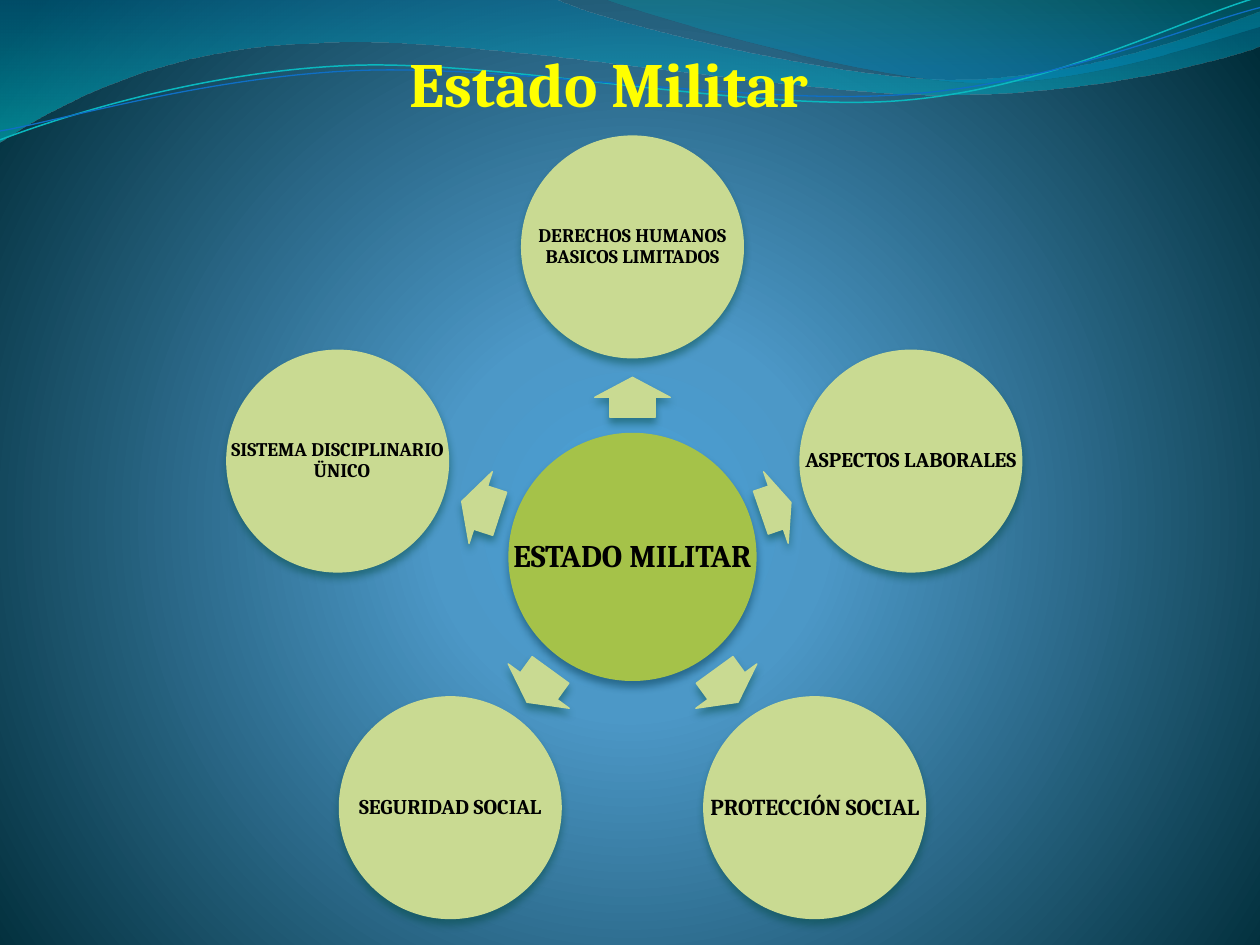
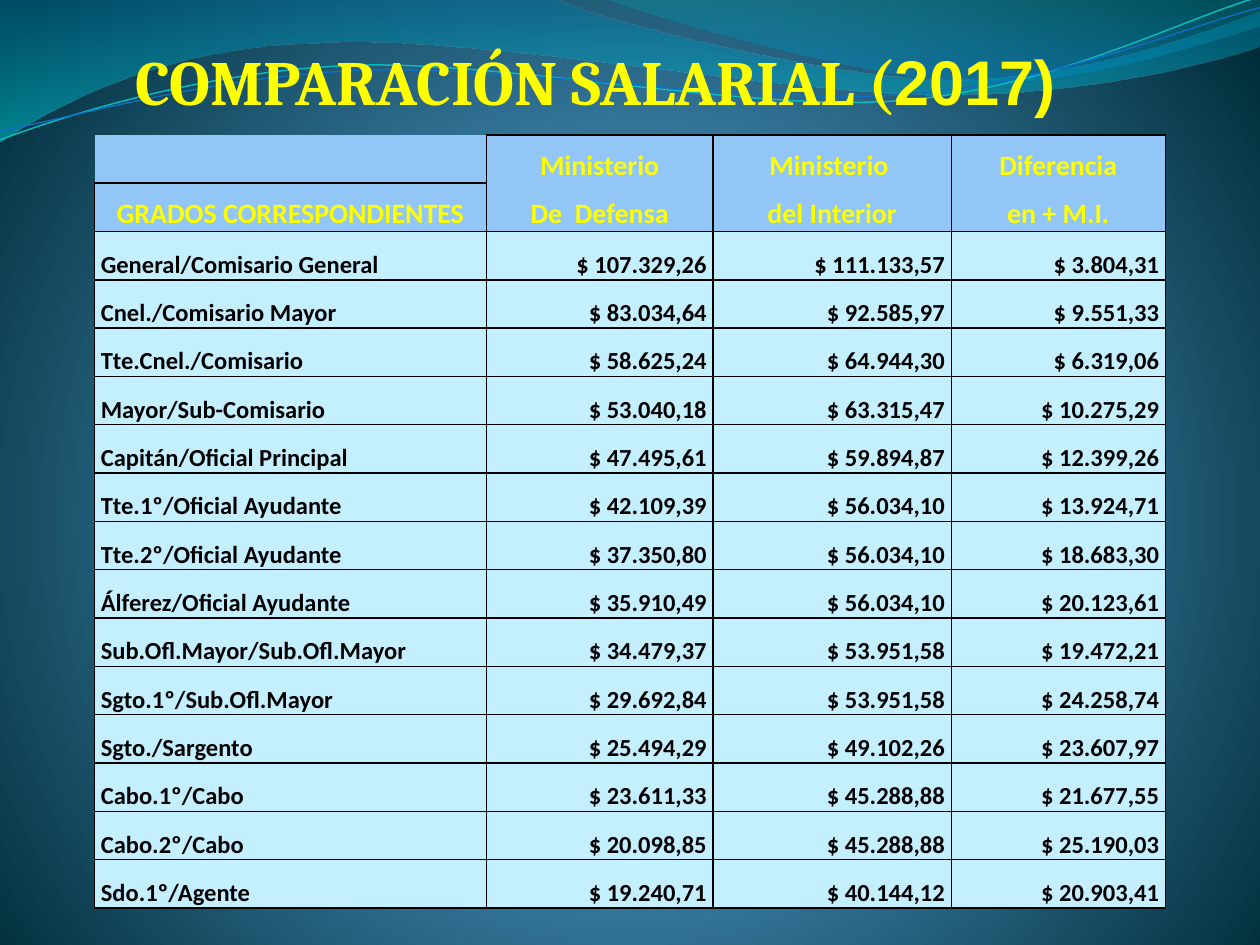
import math
from dataclasses import dataclass
from typing import NamedTuple, Optional

from pptx import Presentation
from pptx.dml.color import RGBColor
from pptx.enum import shapes, text
from pptx.oxml import parse_xml
from pptx.oxml.ns import nsdecls, qn
from pptx.util import Inches, Pt


@dataclass(frozen=True)
class Theme:
    title: str = "FFFF00"
    ink: str = "000000"
    hub: str = "A5C249"
    hub_shadow: str = "00374C"
    node: str = "C9DA92"
    node_shadow: str = "034C44"
    header_fill: str = "91C6F7"
    body_fill: str = "C4EFFF"
    serif: str = "Cambria"
    sans: str = "Calibri"
    digits: str = "Arial"
    title_size: int = 36
    hub_size: int = 18
    header_size: int = 16
    body_size: int = 14


THEME = Theme()


class Stop(NamedTuple):
    position: int
    color: str
    opacity: int = 100


@dataclass(frozen=True)
class Wave:
    """A start point, then curves of six numbers and lines of two, in inches."""
    start: tuple
    steps: tuple
    stops: tuple = ()
    line: Optional[str] = None
    width: float = 0
    tilt: float = 0


class Node(NamedTuple):
    label: str
    size: int
    shift: float = 0


LINEAR = '<a:lin ang="5400000" scaled="1"/>'
RADIAL = ('<a:path path="circle"><a:fillToRect l="10000" t="110000" '
          'r="10000" b="100000"/></a:path>')
BACKGROUND = (Stop(0, "4AA0D6"), Stop(25, "4C98C7"), Stop(100, "002C38"))

TILT_CENTER = (4.99, 0.58)
WAVES = (
    Wave((0, 0), ((4.4, -0.01), (4.76, 0.17, 6.64, 0.63, 7.58, 0.63),
                  (8.53, 0.63, 9.58, 0.26, 10, 0.09), (10.01, 0.36),
                  (9.83, 0.44, 8.7, 0.76, 7.46, 0.75),
                  (6.22, 0.75, 3.82, 0.28, 2.57, 0.34),
                  (1.29, 0.36, 0.46, 0.83, -0.01, 1.13), (0, 0)),
         stops=(Stop(0, "0074A1", 45), Stop(100, "00C6CF", 55))),
    Wave((4.79, -0.01), ((5.09, 0.11, 6.82, 0.62, 7.69, 0.65),
                         (8.56, 0.69, 9.61, 0.32, 10, 0.21), (10, 0), (4.79, -0.01)),
         stops=(Stop(0, "00A1A9", 30), Stop(80, "008BBF", 45))),
    Wave((0, 1.11), ((0.48, 0.93, 1.58, 0.57, 2.77, 0.52),
                     (3.95, 0.47, 5.93, 0.89, 7.13, 0.8),
                     (8.33, 0.71, 9.38, 0.15, 9.98, -0.02)),
         line="0AB8BF", width=0.85, tilt=-2.7),
    Wave((0, 1.04), ((0.47, 0.96, 1.64, 0.61, 2.83, 0.56),
                     (4.03, 0.51, 5.97, 0.84, 7.17, 0.75),
                     (8.36, 0.67, 9.41, 0.21, 10, 0.06)),
         line="0F6FC6", width=0.75, tilt=-2.7),
)

NODES = (
    Node("DERECHOS HUMANOS BASICOS LIMITADOS", 11),
    Node("ASPECTOS LABORALES", 12, shift=-0.13),
    Node("PROTECCIÓN SOCIAL", 13),
    Node("SEGURIDAD SOCIAL", 12),
    Node("SISTEMA DISCIPLINARIO   ÜNICO", 11),
)

COLUMNS = (3.11, 1.8, 1.89, 1.7)
HEADERS = (
    ("", "Ministerio", "Ministerio ", "Diferencia"),
    ("GRADOS CORRESPONDIENTES", "De  Defensa", "del Interior", "en + M.I."),
)
SALARIES = (
    ("General/Comisario General", "107.329,26", "111.133,57", "3.804,31"),
    ("Cnel./Comisario Mayor", "83.034,64", "92.585,97", "9.551,33"),
    ("Tte.Cnel./Comisario", "58.625,24", "64.944,30", "6.319,06"),
    ("Mayor/Sub-Comisario", "53.040,18", "63.315,47", "10.275,29"),
    ("Capitán/Oficial Principal", "47.495,61", "59.894,87", "12.399,26"),
    ("Tte.1º/Oficial Ayudante", "42.109,39", "56.034,10", "13.924,71"),
    ("Tte.2º/Oficial Ayudante", "37.350,80", "56.034,10", "18.683,30"),
    ("Álferez/Oficial Ayudante", "35.910,49", "56.034,10", "20.123,61"),
    ("Sub.Ofl.Mayor/Sub.Ofl.Mayor", "34.479,37", "53.951,58", "19.472,21"),
    ("Sgto.1º/Sub.Ofl.Mayor", "29.692,84", "53.951,58", "24.258,74"),
    ("Sgto./Sargento", "25.494,29", "49.102,26", "23.607,97"),
    ("Cabo.1º/Cabo", "23.611,33", "45.288,88", "21.677,55"),
    ("Cabo.2º/Cabo", "20.098,85", "45.288,88", "25.190,03"),
    ("Sdo.1º/Agente", "19.240,71", "40.144,12", "20.903,41"),
)


def rgb(color: str) -> RGBColor:
    return RGBColor.from_string(color)


def style_run(r, font: str, size: float, color: str) -> None:
    r.font.name, r.font.size, r.font.bold = font, Pt(size), True
    r.font.color.rgb = rgb(color)


def set_margins(target, side: float, vertical: float) -> None:
    target.margin_left = target.margin_right = Inches(side)
    target.margin_top = target.margin_bottom = Inches(vertical)


def gradient(stops: tuple, direction: str, ns: str = "") -> str:
    items = "".join(
        f'<a:gs pos="{stop.position * 1000}"><a:srgbClr val="{stop.color}">'
        f'<a:alpha val="{stop.opacity * 1000}"/></a:srgbClr></a:gs>' for stop in stops)
    return f'<a:gradFill {ns} rotWithShape="1"><a:gsLst>{items}</a:gsLst>{direction}</a:gradFill>'


def level(point: tuple, tilt: float) -> tuple:
    """Where a point of a tilted wave lies before the wave is rotated."""
    turn = math.radians(-tilt)
    dx, dy = point[0] - TILT_CENTER[0], point[1] - TILT_CENTER[1]
    return (Inches(TILT_CENTER[0] + dx * math.cos(turn) - dy * math.sin(turn)),
            Inches(TILT_CENTER[1] + dx * math.sin(turn) + dy * math.cos(turn)))


def draw_wave(s, wave: Wave) -> None:
    steps = [[level(step[i:i + 2], wave.tilt) for i in range(0, len(step), 2)]
             for step in wave.steps]
    builder = s.shapes.build_freeform(*level(wave.start, wave.tilt))
    builder.add_line_segments([step[-1] for step in steps], close=bool(wave.stops))
    sp = builder.convert_to_shape()
    props = sp.element.spPr
    for segment, step in zip(list(props.iter(qn("a:lnTo"))), steps):
        if len(step) == 3:
            points = "".join(f'<a:pt x="{x - sp.left}" y="{y - sp.top}"/>' for x, y in step)
            segment.getparent().replace(segment, parse_xml(
                f'<a:cubicBezTo {nsdecls("a")}>{points}</a:cubicBezTo>'))
    sp.rotation = wave.tilt
    sp.shadow.inherit = False
    sp.fill.background()
    if wave.stops:
        sp.line.fill.background()
        props.replace(props.find(qn("a:noFill")),
                      parse_xml(gradient(wave.stops, LINEAR, nsdecls("a"))))
    else:
        sp.line.color.rgb = rgb(wave.line)
        sp.line.width = Pt(wave.width)


def new_slide(prs):
    """A blank slide with the radial background and the waves."""
    s = prs.slides.add_slide(prs.slide_layouts[6])
    s.element.cSld.insert(0, parse_xml(
        f'<p:bg {nsdecls("p", "a")}><p:bgPr>{gradient(BACKGROUND, RADIAL)}'
        '<a:effectLst/></p:bgPr></p:bg>'))
    for wave in WAVES:
        draw_wave(s, wave)
    return s


def add_text(s, box: tuple, size: float, color: str, *parts: tuple):
    """A wrapped text box with one paragraph of (text, font) parts."""
    tf = s.shapes.add_textbox(*map(Inches, box)).text_frame
    tf.word_wrap = True
    for words, font in parts:
        r = tf.paragraphs[0].add_run()
        r.text = words
        style_run(r, font, size, color)
    return tf


def center_text(tf, margin: float, anchor, spacing: float) -> None:
    set_margins(tf, margin, margin)
    tf.vertical_anchor = anchor
    p = tf.paragraphs[0]
    p.alignment, p.line_spacing = text.PP_ALIGN.CENTER, spacing


def add_solid(s, kind, center: tuple, size: tuple, color: str, shadow: str):
    (x, y), (w, h) = center, size
    sp = s.shapes.add_shape(kind, Inches(x - w / 2), Inches(y - h / 2), Inches(w), Inches(h))
    sp.fill.solid()
    sp.fill.fore_color.rgb = sp.line.color.rgb = rgb(color)
    sp.line.width = Pt(0.75)
    sp.shadow.inherit = False
    sp.element.spPr.find(qn("a:effectLst")).append(parse_xml(
        f'<a:outerShdw {nsdecls("a")} blurRad="{Pt(4.5)}" dist="{Pt(3)}" dir="5400000" '
        f'rotWithShape="0"><a:srgbClr val="{shadow}"><a:alpha val="48000"/></a:srgbClr>'
        '</a:outerShdw>'))
    return sp


def add_circle(s, center: tuple, diameter: float, label: str, size: int,
               color: str, shadow: str) -> None:
    """A circle with a label that may use its full width."""
    add_solid(s, shapes.MSO_SHAPE.OVAL, center, (diameter, diameter), color, shadow)
    box = (center[0] - diameter / 2, center[1] - diameter / 2, diameter, diameter)
    tf = add_text(s, box, size, THEME.ink, (label, THEME.serif))
    center_text(tf, 0.02, text.MSO_ANCHOR.MIDDLE, 0.9)


def build_wheel(prs) -> None:
    s = new_slide(prs)
    tf = add_text(s, (1.69, -1.05, 6.28, 2), THEME.title_size, THEME.title,
                  ("Estado Militar", THEME.serif))
    center_text(tf, 0, text.MSO_ANCHOR.BOTTOM, 1.5)

    cx, cy = 5.02, 4.42
    hub, leaf, orbit = 1.96, 1.76, 2.46
    add_circle(s, (cx, cy), hub, "ESTADO MILITAR", THEME.hub_size, THEME.hub, THEME.hub_shadow)
    for i, node in enumerate(NODES):
        turn = math.radians(360 / len(NODES) * i - 90)
        dx, dy = orbit * math.cos(turn) + node.shift, orbit * math.sin(turn)
        gap = math.hypot(dx, dy) - (hub + leaf) / 2
        arrow = add_solid(s, shapes.MSO_SHAPE.RIGHT_ARROW, (cx + 0.515 * dx, cy + 0.515 * dy),
                          (0.53 * gap, 0.6), THEME.node, THEME.node_shadow)
        arrow.adjustments[0], arrow.adjustments[1] = 0.6, 0.5
        arrow.rotation = math.degrees(math.atan2(dy, dx)) % 360
        add_circle(s, (cx + dx, cy + dy), leaf, node.label, node.size,
                   THEME.node, THEME.node_shadow)


def set_borders(cell, sides: str) -> None:
    """Black lines on the named sides (of LRTB), none on the others."""
    props = cell._tc.get_or_add_tcPr()
    for side in "LRTB":
        fill = (f'<a:solidFill><a:srgbClr val="{THEME.ink}"/></a:solidFill>'
                if side in sides else "<a:noFill/>")
        props.append(parse_xml(f'<a:ln{side} {nsdecls("a")} w="{Pt(1)}">{fill}</a:ln{side}>'))


def fill_cell(cell, words: str, row: int, column: int) -> None:
    header = row < len(HEADERS)
    if header and column:
        sides = "LRT" if row == 0 else "LRB"
    else:
        sides = "RB" if row == 0 else "LRTB"
    set_borders(cell, sides)
    cell.fill.solid()
    cell.fill.fore_color.rgb = rgb(THEME.header_fill if header else THEME.body_fill)
    cell.vertical_anchor = text.MSO_ANCHOR.BOTTOM
    set_margins(cell, 0.05, 0)
    cell.text_frame.text = words
    p = cell.text_frame.paragraphs[0]
    p.line_spacing = 1.15
    if header:
        p.alignment = text.PP_ALIGN.CENTER
    else:
        p.alignment = text.PP_ALIGN.RIGHT if column else text.PP_ALIGN.LEFT
    for r in p.runs:
        style_run(r, THEME.sans, THEME.header_size if header else THEME.body_size,
                  THEME.title if header else THEME.ink)


def build_salaries(prs) -> None:
    s = new_slide(prs)
    add_text(s, (0.98, 0.29, 9.14, 0.71), THEME.title_size, THEME.title,
             ("COMPARACIÓN SALARIAL (", THEME.serif), ("2017)", THEME.digits))
    rows = HEADERS + tuple((rank, *(f"$ {pay}" for pay in pays)) for rank, *pays in SALARIES)
    table = s.shapes.add_table(len(rows), len(COLUMNS), Inches(0.75), Inches(1.07),
                               Inches(sum(COLUMNS)), Inches(6.14)).table
    table.first_row = table.horz_banding = False
    for column, width in zip(table.columns, COLUMNS):
        column.width = Inches(width)
    for i, row in enumerate(rows):
        for j, words in enumerate(row):
            fill_cell(table.cell(i, j), words, i, j)


def main() -> None:
    prs = Presentation()
    prs.slide_width, prs.slide_height = Inches(10), Inches(7.5)
    build_wheel(prs)
    build_salaries(prs)
    prs.save("out.pptx")


if __name__ == "__main__":
    main()
